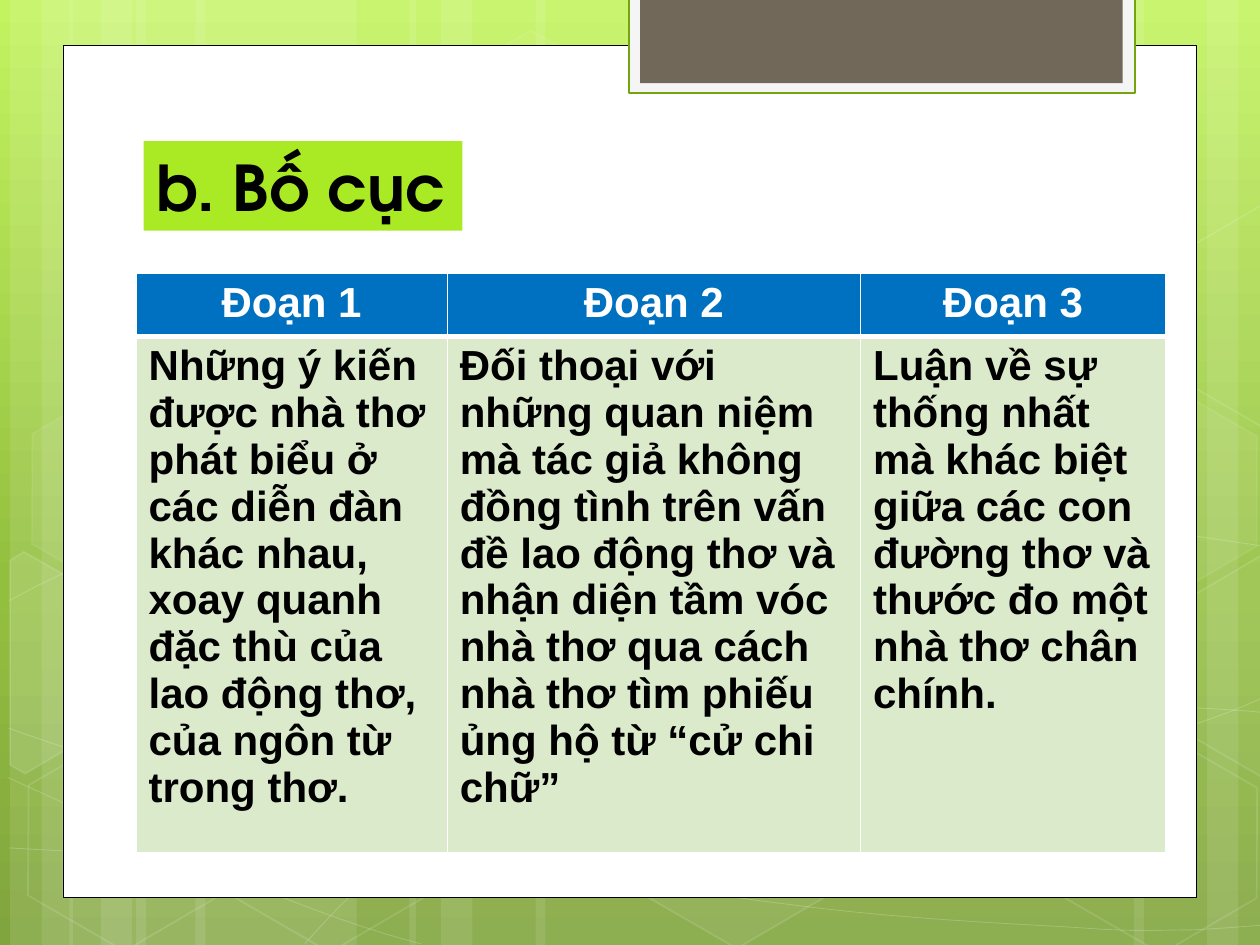
from lxml import etree
from pptx import Presentation
from pptx.dml.color import RGBColor
from pptx.enum.shapes import MSO_SHAPE
from pptx.enum.text import MSO_ANCHOR, PP_ALIGN
from pptx.oxml.ns import qn
from pptx.util import Inches, Pt

RECT, HEX = MSO_SHAPE.RECTANGLE, MSO_SHAPE.HEXAGON
BOTTOM, CENTER, LEFT = MSO_ANCHOR.BOTTOM, PP_ALIGN.CENTER, PP_ALIGN.LEFT

WHITE = RGBColor(0xFF, 0xFF, 0xFF)
BLACK = RGBColor(0, 0, 0)
PALE = RGBColor(0xF5, 0xF5, 0xF5)
GREEN = RGBColor(0x74, 0xA5, 0x10)
TAUPE = RGBColor(0x71, 0x68, 0x5A)
LIME = RGBColor(0xAA, 0xEA, 0x25)
BLUE = RGBColor(0, 0x70, 0xC0)
MINT = RGBColor(0xDC, 0xEA, 0xCC)
STOPS = [(0, RGBColor(0xC3, 0xF3, 0x5F)), (62, RGBColor(0x93, 0xBF, 0x3F)),
         (100, RGBColor(0x81, 0xA5, 0x3E))]

WIDE, HIGH = 10, 7.5
TITLE_FONT, BODY_FONT = "TeX Gyre Adventor", "Arial"

# Full-height stripes: left, width
BARS = [(1.08, 1.75), (0.08, 0.5), (0.33, 0.83), (1.55, 1.75), (0.55, 0.5),
        (0.8, 0.83), (7.33, 1.75), (9.58, 0.5), (9, 0.83), (4.25, 3.08),
        (3.25, 0.5), (3.5, 0.83)]

# Waves: start point, then Bezier triples
WAVES = [
    [(0.07, 6.73), (0.61, 6.76), (1.15, 6.79), (1.9, 6.78), (2.65, 6.77),
     (3.58, 6.75), (4.58, 6.65), (5.58, 6.55), (7, 6.36), (7.92, 6.17),
     (8.83, 5.98), (9.77, 5.68), (10.07, 5.51)],
    [(0.07, 4.77), (0.36, 4.61), (0.65, 4.46), (1.21, 4.31), (1.78, 4.16),
     (2.59, 3.94), (3.47, 3.87), (4.36, 3.8), (5.44, 3.79), (6.54, 3.87),
     (7.64, 3.95), (9.47, 4.26), (10.07, 4.34)],
    [(0.06, 6.17), (1.27, 6.72), (2.47, 7.27), (3.34, 7.49)],
    [(0.07, 5.78), (0.38, 5.89), (0.7, 6), (1.28, 6.16), (1.86, 6.31),
     (2.73, 6.56), (3.57, 6.73), (4.4, 6.9), (5.45, 7.08), (6.28, 7.18),
     (7.11, 7.29), (8, 7.33), (8.53, 7.36), (9.05, 7.4), (9.19, 7.38),
     (9.45, 7.38), (9.71, 7.37), (9.89, 7.35), (10.07, 7.34)],
    [(2.42, 7.49), (2.6, 7.29), (2.78, 7.09), (3.02, 6.91), (3.26, 6.73),
     (3.6, 6.53), (3.88, 6.39), (4.16, 6.25), (4.33, 6.19), (4.7, 6.09),
     (5.06, 5.99), (5.73, 5.85), (6.08, 5.78), (6.44, 5.71), (6.49, 5.71),
     (6.8, 5.69), (7.11, 5.66), (7.6, 5.63), (7.94, 5.62), (8.29, 5.61),
     (8.86, 5.62), (8.86, 5.62), (9.08, 5.62), (9.31, 5.62), (9.53, 5.62),
     (9.71, 5.63), (9.88, 5.64), (9.97, 5.65), (10.06, 5.66), (10.03, 5.65),
     (10.06, 5.66)],
]

# Hexagons: left, top, fill opacity, line opacity
CELLS = [(3.34, 0.36, 4, 8), (4.97, 5.89, 6, 12), (0.11, 5.91, 0, 12),
         (0.14, 3.12, 7, 8), (1.74, 5.92, 0, 12), (7.53, 4.53, 10, 12),
         (8.34, 5.93, 0, 12), (8.34, 3.14, 7, 8)]

# Hexagons cut by the slide's edge: corners, fill opacity
CUTS = [
    ([(0.08, 4.45), (0.19, 4.38), (0.96, 4.82), (0.95, 5.7), (0.2, 6.14),
      (0.08, 6.07)], 10),
    ([(9.26, 4.85), (10.01, 4.41), (10.09, 4.46), (10.09, 6.13),
      (10.02, 6.17), (9.26, 5.73)], 4),
    ([(9.26, 2.07), (10.01, 1.63), (10.1, 1.68), (10.09, 3.35),
      (10.02, 3.39), (9.26, 2.95)], 0),
]

HEADS = ["Đoạn 1", "Đoạn 2", "Đoạn 3"]
TEXTS = [
    "Những ý kiến được nhà thơ phát biểu ở các diễn đàn khác nhau, xoay "
    "quanh đặc thù của lao động thơ, của ngôn từ trong thơ.",
    "Đối thoại với những quan niệm mà tác giả không đồng tình trên vấn đề "
    "lao động thơ và nhận diện tầm vóc nhà thơ qua cách nhà thơ tìm phiếu "
    "ủng hộ từ “cử chi chữ”",
    "Luận về sự thống nhất mà khác biệt giữa các con đường thơ và thước đo "
    "một nhà thơ chân chính.",
]


def fade(part, share):
    """Set the opacity, in percent, of a solid fill or line."""
    tint = part.find(qn("a:solidFill")).find(qn("a:srgbClr"))
    etree.SubElement(tint, qn("a:alpha"), val=str(share * 1000))


def paint(shape, fill=None, line=None, width=1, sheer=None, haze=None):
    """Style a shape; sheer and haze are fill and line opacity."""
    shape.shadow.inherit = False
    props = shape.element.spPr
    if fill is None or sheer == 0:
        shape.fill.background()
    else:
        shape.fill.solid()
        shape.fill.fore_color.rgb = fill
        if sheer:
            fade(props, sheer)
    if line is None:
        shape.line.fill.background()
    else:
        shape.line.color.rgb = line
        shape.line.width = Pt(width)
        if haze:
            fade(props.find(qn("a:ln")), haze)


def block(slide, x, y, w, h, kind=RECT, **style):
    shape = slide.shapes.add_shape(kind, *map(Inches, (x, y, w, h)))
    paint(shape, **style)
    return shape


def outline(slide, dots, close, **style):
    spots = [(Inches(x), Inches(y)) for x, y in dots]
    pen = slide.shapes.build_freeform(*spots[0])
    pen.add_line_segments(spots[1:], close=close)
    shape = pen.convert_to_shape()
    paint(shape, **style)
    return shape


def bend(shape):
    """Turn each three straight segments into one Bezier curve."""
    legs = list(shape.element.iter(qn("a:lnTo")))
    for i in range(0, len(legs), 3):
        arc = etree.Element(qn("a:cubicBezTo"))
        legs[i].addprevious(arc)
        for leg in legs[i:i + 3]:
            arc.append(leg[0])
            leg.getparent().remove(leg)


def backdrop(slide):
    fill = slide.background.fill
    fill.gradient()
    fill.gradient_angle = 270
    ramp = next(slide.element.iter(qn("a:gsLst")))
    for stop in list(ramp):
        ramp.remove(stop)
    for share, tint in STOPS:
        stop = etree.SubElement(ramp, qn("a:gs"), pos=str(share * 1000))
        etree.SubElement(stop, qn("a:srgbClr"), val=str(tint))

    for x, w in BARS:
        block(slide, x, 0, w, HIGH, fill=WHITE, sheer=10)
    for knots in WAVES:
        bend(outline(slide, knots, False, line=WHITE, width=0.5, haze=20))
    for x, y, sheer, haze in CELLS:
        cell = block(slide, x, y, 1.75, 1.52, HEX, fill=WHITE, line=WHITE,
                     sheer=sheer, haze=haze)
        cell.adjustments[0] = 0.285
        cell.rotation = 30
    for dots, sheer in CUTS:
        outline(slide, dots, True, fill=WHITE, line=WHITE, sheer=sheer, haze=12)


def style(para, name, size, tint, align=LEFT):
    para.alignment = align
    font = para.font
    font.name, font.size, font.bold = name, Pt(size), True
    font.color.rgb = tint


def title(slide, text):
    box = slide.shapes.add_textbox(*map(Inches, (1.14, 1.12, 2.53, 0.71)))
    box.fill.solid()
    box.fill.fore_color.rgb = LIME
    frame = box.text_frame
    frame.word_wrap, frame.vertical_anchor = True, BOTTOM
    frame.text = text
    style(frame.paragraphs[0], TITLE_FONT, 36, BLACK)


def border(cell, **widths):
    props = cell._tc.get_or_add_tcPr()
    for i, (side, width) in enumerate(widths.items()):
        edge = etree.Element(qn("a:ln" + side), w=str(Pt(width)))
        solid = etree.SubElement(edge, qn("a:solidFill"))
        etree.SubElement(solid, qn("a:srgbClr"), val=str(WHITE))
        props.insert(i, edge)


def grid(slide):
    cols, tall = (2.47, 3.28, 2.42), 4.6
    size = (1.08, 2.17, sum(cols), tall)
    frame = slide.shapes.add_table(2, 3, *map(Inches, size))
    table = frame.table
    for col, w in zip(table.columns, cols):
        col.width = Inches(w)
    looks = [(HEADS, BLUE, WHITE, CENTER, 1, 3), (TEXTS, MINT, BLACK, LEFT, 3, 1)]
    for r, (words, fill, tint, align, top, base) in enumerate(looks):
        table.rows[r].height = Inches(0.41)
        for c, text in enumerate(words):
            cell = table.cell(r, c)
            cell.text = text
            cell.fill.solid()
            cell.fill.fore_color.rgb = fill
            style(cell.text_frame.paragraphs[0], BODY_FONT, 24, tint, align)
            border(cell, L=1, R=1, T=top, B=base)
    # Rows grow with their text inside this height
    frame.height = Inches(tall)


def main():
    deck = Presentation()
    deck.slide_width, deck.slide_height = Inches(WIDE), Inches(HIGH)
    slide = deck.slides.add_slide(deck.slide_layouts[6])
    backdrop(slide)
    # White panel and the tab hanging from the top
    block(slide, 0.5, 0.36, 9, 6.76, fill=WHITE, line=BLACK, width=0.5)
    block(slide, 4.99, -0.02, 4.02, 0.76, fill=PALE, line=GREEN, width=1.25)
    block(slide, 5.08, -0.02, 3.83, 0.68, fill=TAUPE)
    title(slide, "b. Bố cục")
    grid(slide)
    deck.save("out.pptx")


if __name__ == "__main__":
    main()
